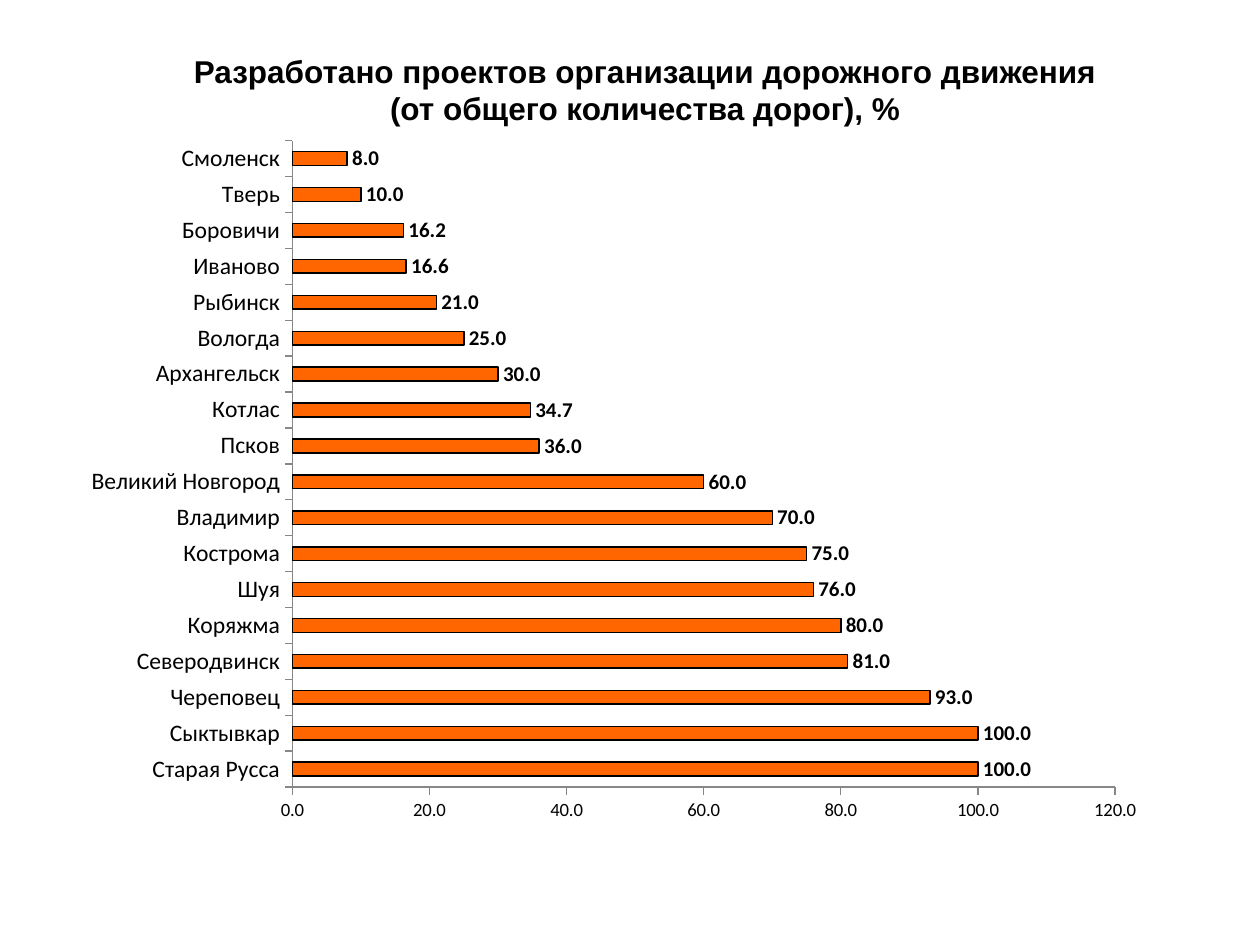
from pptx import Presentation
from pptx.chart.data import CategoryChartData as Data
from pptx.dml.color import RGBColor
from pptx.enum.chart import XL_CHART_TYPE as Kind, XL_LABEL_POSITION as Spot
from pptx.enum.chart import XL_TICK_MARK as Tick
from pptx.enum.text import MSO_ANCHOR as Anchor, MSO_AUTO_SIZE as Fit, PP_ALIGN as Align
from pptx.oxml import parse_xml
from pptx.util import Inches, Pt

BLACK = RGBColor(0, 0, 0)
GREY = RGBColor(0x87, 0x87, 0x87)
ORANGE = RGBColor(0xFF, 0x66, 0x00)
FORMAT = "#,##0.0"
CHART_NS = "http://schemas.openxmlformats.org/drawingml/2006/chart"
PLOT = {"x": 0.214, "y": 0.008, "w": 0.709, "h": 0.891}
TITLE = ["Разработано проектов организации дорожного движения",
         "(от общего количества дорог), %"]
CITIES = {
    "Старая Русса": 100, "Сыктывкар": 100, "Череповец": 93,
    "Северодвинск": 81, "Коряжма": 80, "Шуя": 76, "Кострома": 75,
    "Владимир": 70, "Великий Новгород": 60, "Псков": 36, "Котлас": 34.7,
    "Архангельск": 30, "Вологда": 25, "Рыбинск": 21, "Иваново": 16.6,
    "Боровичи": 16.2, "Тверь": 10, "Смоленск": 8,
}


def assign(item, **values):
    """Set each named value on the item."""
    for name, value in values.items():
        setattr(item, name, value)


class Deck:
    """Hold the text style and the current slide."""

    def __init__(self):
        """Start a deck with one titled slide."""
        self.prs = Presentation()
        assign(self.prs, slide_width=Inches(10), slide_height=Inches(7.5))
        self.slide = self.prs.slides.add_slide(self.prs.slide_layouts[5])

    def style(self, font, size, face="Calibri", bold=False):
        """Format a font in black."""
        assign(font, size=Pt(size), name=face, bold=bold)
        font.color.rgb = BLACK

    def title(self, lines, left, top, width, height):
        """Fill and place the title."""
        box = self.slide.shapes.title
        assign(box, left=Inches(left), top=Inches(top),
               width=Inches(width), height=Inches(height))
        frame = box.text_frame
        frame.text = "\n".join(lines)
        assign(frame, word_wrap=True, auto_size=Fit.NONE,
               vertical_anchor=Anchor.TOP)
        for para in frame.paragraphs:
            assign(para, alignment=Align.CENTER, line_spacing=1.0,
                   space_before=Pt(0))
            self.style(para.runs[0].font, 18, "Arial", True)

    def axis(self, axis, size):
        """Format one chart axis."""
        assign(axis, has_major_gridlines=False, major_tick_mark=Tick.OUTSIDE,
               minor_tick_mark=Tick.NONE)
        self.style(axis.tick_labels.font, size)
        assign(axis.format.line, width=Pt(0.75))
        axis.format.line.color.rgb = GREY

    def bars(self, values, left, top, width, height):
        """Add a bar chart of the values."""
        data = Data(number_format=FORMAT)
        data.categories = list(values)
        data.add_series("Series 1", list(values.values()))
        chart = self.slide.shapes.add_chart(
            Kind.BAR_CLUSTERED, Inches(left), Inches(top),
            Inches(width), Inches(height), data).chart
        assign(chart, has_legend=False, has_title=False)
        self.style(chart.font, 14.2)
        self.axis(chart.category_axis, 13.5)
        scale = chart.value_axis
        self.axis(scale, 10.7)
        assign(scale, minimum_scale=0, maximum_scale=120, major_unit=20)
        assign(scale.tick_labels, number_format=FORMAT,
               number_format_is_linked=False)
        plot = chart.plots[0]
        assign(plot, gap_width=162, overlap=-68, vary_by_categories=False,
               has_data_labels=True)
        labels = plot.data_labels
        assign(labels, show_value=True, position=Spot.OUTSIDE_END,
               number_format=FORMAT, number_format_is_linked=False)
        self.style(labels.font, 12, bold=True)
        look = plot.series[0].format
        look.fill.solid()
        look.fill.fore_color.rgb = ORANGE
        look.line.width = Pt(0.89)
        look.line.color.rgb = BLACK
        self.layout(chart)

    def layout(self, chart):
        """Fix the inner plot area."""
        area = chart.element.find(f".//{{{CHART_NS}}}plotArea")
        for old in area.findall(f"{{{CHART_NS}}}layout"):
            area.remove(old)
        modes = "".join(f'<c:{k}Mode val="edge"/>' for k in "xy")
        sizes = "".join(f'<c:{k} val="{v}"/>' for k, v in PLOT.items())
        area.insert(0, parse_xml(
            f'<c:layout xmlns:c="{CHART_NS}"><c:manualLayout>'
            f'<c:layoutTarget val="inner"/>{modes}{sizes}'
            '</c:manualLayout></c:layout>'))


def main():
    """Build the slide and save it."""
    deck = Deck()
    deck.bars(CITIES, 0.35, 1.07, 9.21, 5.76)
    deck.title(TITLE, 0.59, 0.36, 9.06, 0.7)
    deck.prs.save("out.pptx")


if __name__ == "__main__":
    main()
